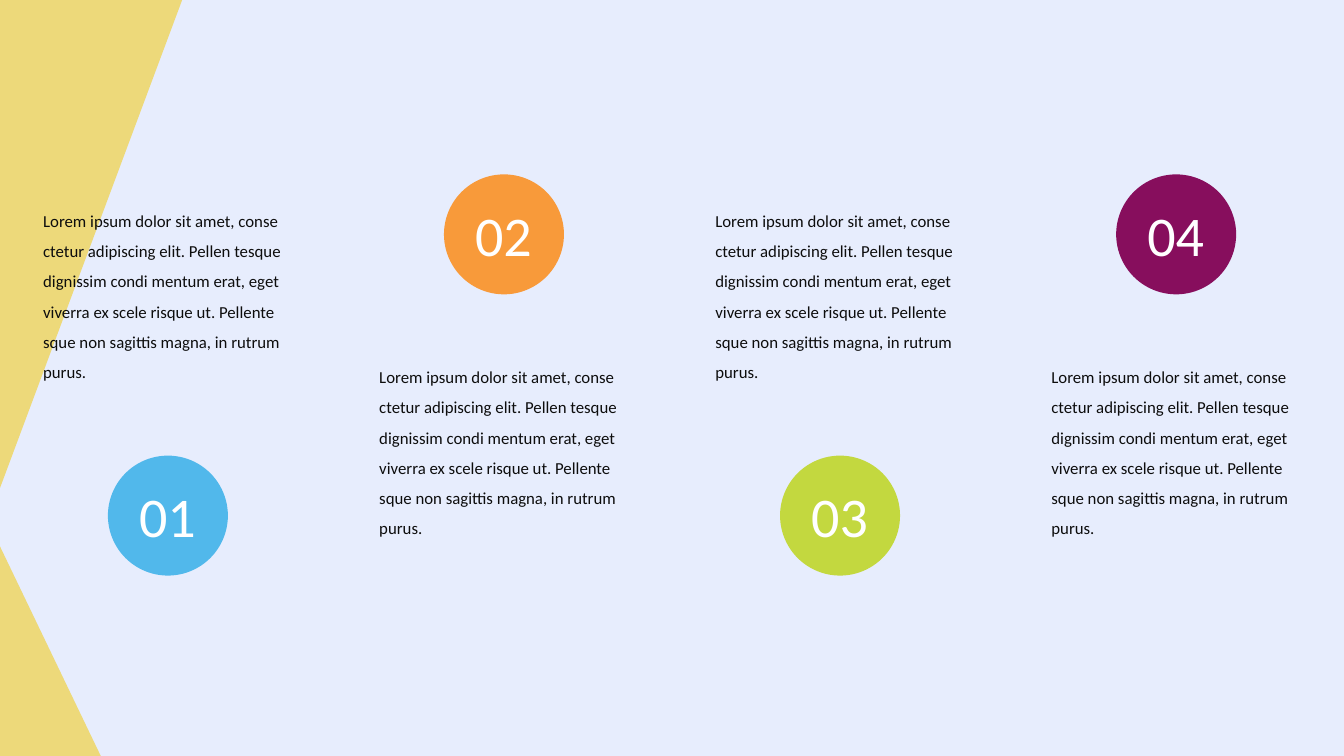
from dataclasses import dataclass

from pptx import Presentation
from pptx.dml.color import RGBColor
from pptx.enum.shapes import MSO_SHAPE
from pptx.enum.text import MSO_AUTO_SIZE, PP_ALIGN
from pptx.util import Inches, Pt


@dataclass(frozen=True)
class Theme:
    font: str = "Calibri"
    background: str = "E7EDFD"
    corner: str = "EDD97A"
    body: str = "0D0D0D"
    number: str = "FFFFFF"
    circles: tuple = ("51B8EB", "F89A3A", "C3D83F", "870E5D")
    body_size: int = 12
    number_size: int = 40


theme = Theme()
deck = Presentation()
deck.slide_width, deck.slide_height = Inches(13.33), Inches(7.5)
page = deck.slides.add_slide(deck.slide_layouts[6])
page.background.fill.solid()
page.background.fill.fore_color.rgb = RGBColor.from_string(theme.background)


def add_filled_shape(kind, left, top, width, height, color):
    shape = page.shapes.add_shape(
        kind, Inches(left), Inches(top), Inches(width), Inches(height))
    shape.shadow.inherit = False
    shape.fill.solid()
    shape.fill.fore_color.rgb = RGBColor.from_string(color)
    shape.line.fill.background()
    return shape


def add_text(text, left, top, width, height, *, size, color,
             align=PP_ALIGN.LEFT, line_spacing=1.0):
    box = page.shapes.add_textbox(
        Inches(left), Inches(top), Inches(width), Inches(height))
    frame = box.text_frame
    frame.word_wrap = True
    frame.auto_size = MSO_AUTO_SIZE.SHAPE_TO_FIT_TEXT
    para = frame.paragraphs[0]
    para.alignment = align
    para.line_spacing = line_spacing
    span = para.add_run()
    span.text = text
    span.font.name = theme.font
    span.font.size = Pt(size)
    span.font.color.rgb = RGBColor.from_string(color)


# Corner triangles on the left edge
add_filled_shape(MSO_SHAPE.RIGHT_TRIANGLE, 0, 5.42, 1, 2.08, theme.corner)
top_corner = add_filled_shape(
    MSO_SHAPE.RIGHT_TRIANGLE, 0, -0.01, 1.81, 4.85, theme.corner)
top_corner.rotation = 180
top_corner.element.spPr.xfrm.set("flipH", "1")

# Four columns, alternating text above and text below the circle
BODY = ("Lorem ipsum dolor sit amet, conse ctetur adipiscing elit. "
        "Pellen tesque dignissim condi mentum erat, eget viverra ex scele "
        "risque ut. Pellente sque non sagittis magna, in rutrum purus.")
FIRST_LEFT = 0.33
COLUMN_STEP = 10 / 3
CIRCLE_INDENT = 0.74
CIRCLE_SIZE = 1.19

for index, circle_color in enumerate(theme.circles):
    left = FIRST_LEFT + index * COLUMN_STEP
    circle_left = left + CIRCLE_INDENT
    body_top, circle_top = (1.94, 4.52) if index % 2 == 0 else (3.49, 1.73)
    add_filled_shape(MSO_SHAPE.OVAL, circle_left, circle_top,
                     CIRCLE_SIZE, CIRCLE_SIZE, circle_color)
    add_text(BODY, left, body_top, 2.66, 1.89,
             size=theme.body_size, color=theme.body, line_spacing=1.5)
    add_text(f"{index + 1:02}", circle_left, circle_top + 0.21, 1.18, 0.77,
             size=theme.number_size, color=theme.number,
             align=PP_ALIGN.CENTER)

deck.save("out.pptx")
